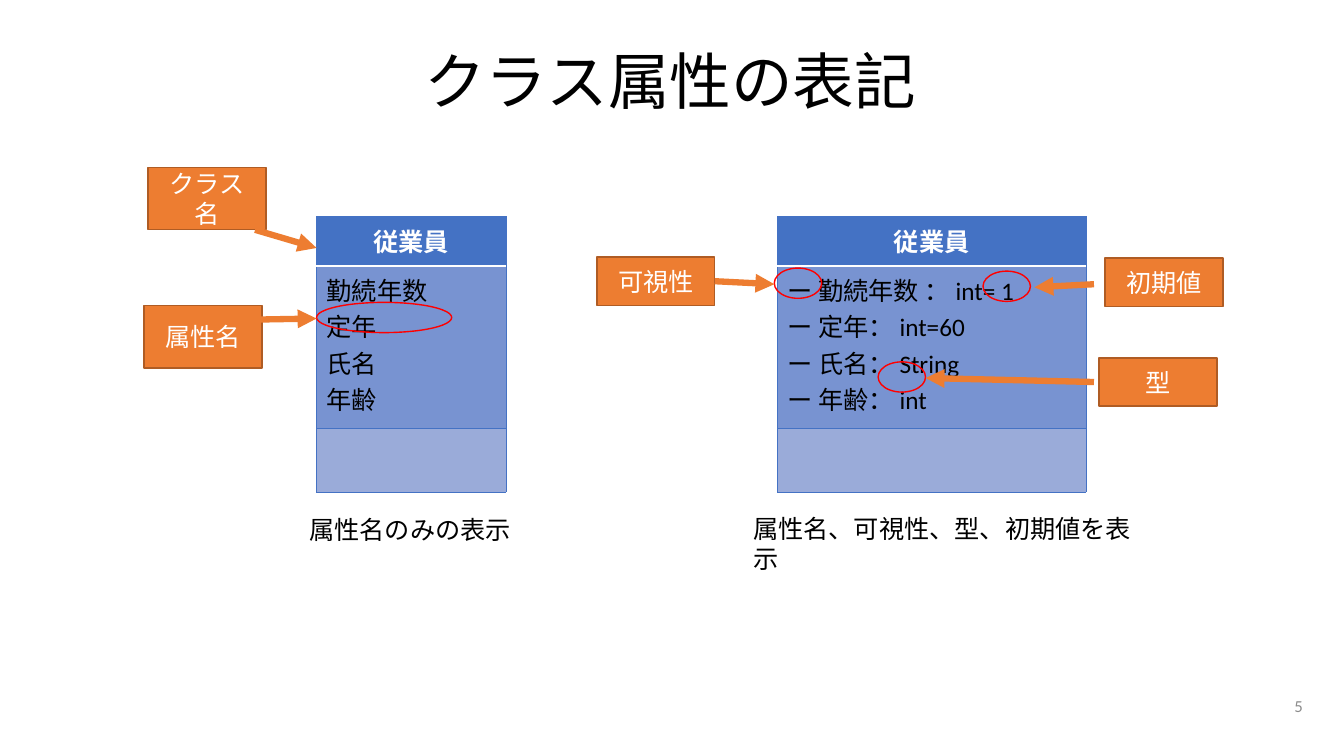
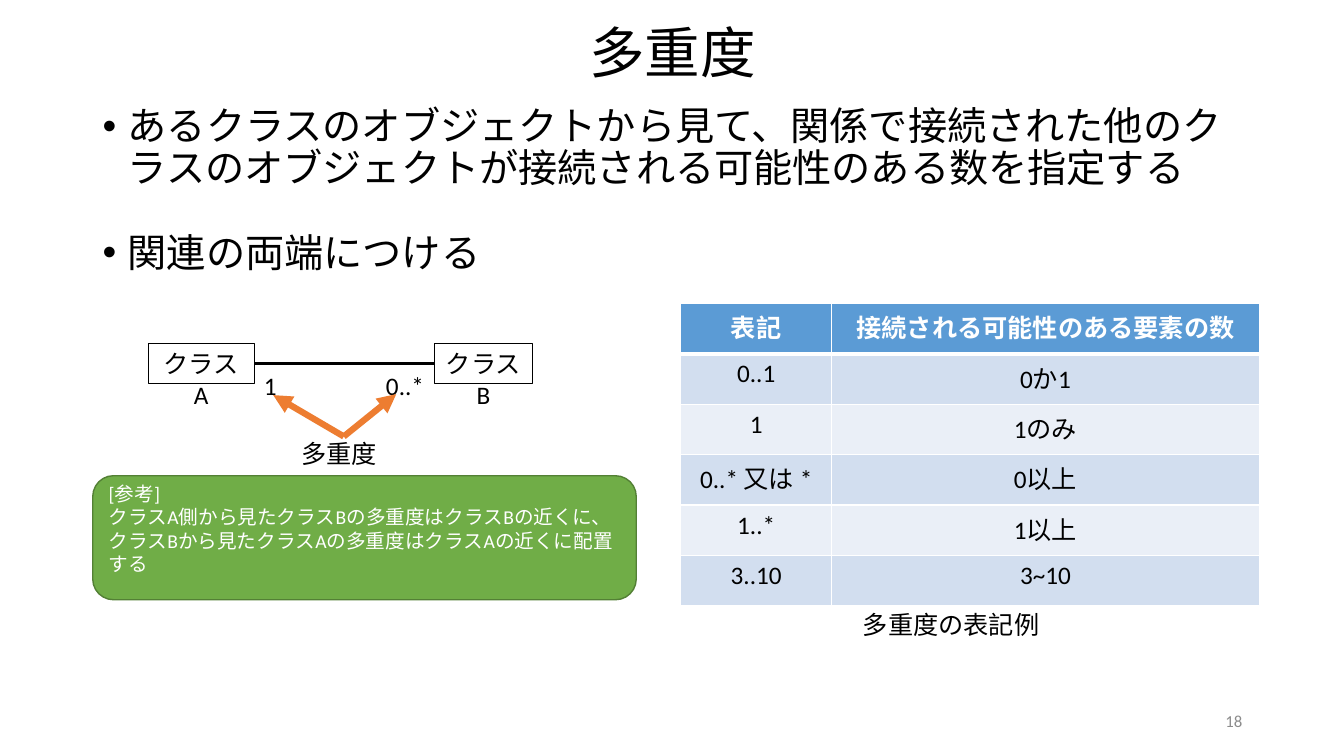
from lxml.etree import SubElement
from pptx import Presentation
from pptx.dml.color import RGBColor
from pptx.enum.shapes import MSO_CONNECTOR, MSO_SHAPE
from pptx.enum.text import MSO_ANCHOR, PP_ALIGN
from pptx.oxml.ns import qn
from pptx.util import Inches, Pt

COLORS = {
    "black": "000000", "white": "FFFFFF", "grey": "8C8C8C", "red": "FF0000",
    "orange": "ED7D31", "orange_edge": "AF5C24",
    "green": "70AD47", "green_edge": "538035",
    "blue": "4472C4", "blue_middle": "7893D1", "blue_pale": "9AABD9",
    "sky": "5B9BD5", "band_dark": "D2DEEF", "band_light": "EAEFF7",
}
LATIN, JAPANESE = "Calibri", "Noto Sans CJK JP"
CENTER, LEFT, RIGHT = PP_ALIGN.CENTER, PP_ALIGN.LEFT, PP_ALIGN.RIGHT
TOP, MIDDLE = MSO_ANCHOR.TOP, MSO_ANCHOR.MIDDLE
TITLE_FORMAT = {"alignment": CENTER, "line_spacing": 0.9}


def color(name):
    return RGBColor.from_string(COLORS[name])


def write(frame, lines, paint="black", size=18, bold=False, anchor=TOP,
          east_asian=LATIN, **paragraph_format):
    frame.word_wrap = True
    frame.vertical_anchor = anchor
    for index, line in enumerate(lines):
        paragraph = frame.paragraphs[0] if index == 0 else frame.add_paragraph()
        for name, value in paragraph_format.items():
            setattr(paragraph, name, value)
        run = paragraph.add_run()
        run.text = line
        for name, value in {"name": LATIN, "size": Pt(size), "bold": bold}.items():
            setattr(run.font, name, value)
        run.font.color.rgb = color(paint)
        SubElement(run._r.get_or_add_rPr(), qn("a:ea")).set("typeface", east_asian)


presentation = Presentation()
presentation.slide_width = Inches(13.33)
presentation.slide_height = Inches(7.5)
blank = presentation.slide_layouts[6]
notation = presentation.slides.add_slide(blank)
multiplicity = presentation.slides.add_slide(blank)

# Titles, page numbers, captions and other plain text
title = {"anchor": MIDDLE, **TITLE_FORMAT}
number = {"paint": "grey", "size": 12, "anchor": MIDDLE, "alignment": RIGHT}
texts = [
    (notation, (0.9, 0.43, 11.5, 0.81), "クラス属性の表記", {"size": 44, **title}),
    (notation, (10.02, 6.8, 3, 0.4), "5", number),
    (notation, (2.97, 5.05, 2.74, 0.4), "属性名のみの表示", {}),
    (notation, (7.37, 5.04, 3.99, 0.4), "属性名、可視性、型、初期値を表示", {}),
    (multiplicity, (0.92, 0.22, 11.5, 0.66), "多重度", {"size": 39.6, **title}),
    (multiplicity, (9.42, 6.95, 3, 0.4), "18", number),
    (multiplicity, (2.52, 3.62, 0.37, 0.4), "1", {}),
    (multiplicity, (3.73, 3.62, 0.68, 0.4), "0..*", {}),
    (multiplicity, (2.89, 4.3, 1.19, 0.4), "多重度", {}),
    (multiplicity, (8.46, 6, 3.44, 0.4), "多重度の表記例", {}),
]
for slide, box, text, text_format in texts:
    shape = slide.shapes.add_textbox(*map(Inches, box))
    write(shape.text_frame, [text], **text_format)

# Bulleted explanation
body = multiplicity.shapes.add_textbox(*map(Inches, (0.92, 1.01, 11.5, 1.9)))
write(body.text_frame, [
    "あるクラスのオブジェクトから見て、関係で接続された他のクラスのオブジェクトが"
    "接続される可能性のある数を指定する",
    "関連の両端につける",
], size=28, line_spacing=0.9)
for paragraph in body.text_frame.paragraphs:
    properties = paragraph._p.get_or_add_pPr()
    properties.set("marL", str(Inches(0.25)))
    properties.set("indent", str(-Inches(0.25)))
    SubElement(properties, qn("a:buFont")).set("typeface", "Arial")
    SubElement(properties, qn("a:buChar")).set("char", "•")
body.text_frame.paragraphs[1].space_before = Pt(30)

# Class boxes and the table of multiplicities; a cell is a list of lines
class_rows = [0.49, 1.61, 0.63]
class_fills = ["blue", "blue_middle", "blue_pale"]
class_style = (class_rows, class_fills, LEFT, "blue", 0.5, 1)
count_fills = ["sky"] + ["band_dark", "band_light"] * 2 + ["band_dark"]
count_style = ([0.5] * 6, count_fills, CENTER, "white", 1, 3)
tables = [
    (notation, (3.14, 2.15), [1.88], class_style, [
        [["従業員"]], [["勤続年数", "定年", "氏名", "年齢"]], [[]]]),
    (notation, (7.71, 2.15), [3.06], class_style, [
        [["従業員"]],
        [["ー 勤続年数 ： int= 1", "ー 定年： int=60", "ー 氏名： String", "ー 年齢： int"]],
        [[]]]),
    (multiplicity, (6.75, 3.01), [1.5, 4.24], count_style, [
        [["表記"], ["接続される可能性のある要素の数"]],
        [["0..1"], ["0か1"]],
        [["1"], ["1のみ"]],
        [["0..* 又は *"], ["0以上"]],
        [["1..*"], ["1以上"]],
        [["3..10"], ["3~10"]]]),
]
for slide, corner, widths, style, rows in tables:
    heights, fills, alignment, edge, edge_width, header_width = style
    size = (sum(widths), sum(heights))
    table = slide.shapes.add_table(
        len(rows), len(widths), *map(Inches, corner + size)).table
    table.first_row = table.horz_banding = False
    for column, width in zip(table.columns, widths):
        column.width = Inches(width)
    for row_index, (cells, height, fill) in enumerate(zip(rows, heights, fills)):
        table.rows[row_index].height = Inches(height)
        header = row_index == 0
        for column_index, lines in enumerate(cells):
            cell = table.cell(row_index, column_index)
            for side in ("lnL", "lnR", "lnT", "lnB"):
                divider = (side == "lnB" and header) or (side == "lnT" and row_index == 1)
                border = SubElement(cell._tc.get_or_add_tcPr(), qn(f"a:{side}"))
                border.set("w", str(Pt(header_width if divider else edge_width)))
                paint = SubElement(border, qn("a:solidFill"))
                SubElement(paint, qn("a:srgbClr")).set(
                    "val", COLORS["white" if divider else edge])
            cell.fill.solid()
            cell.fill.fore_color.rgb = color(fill)
            write(cell.text_frame, lines, "white" if header else "black", bold=header,
                  east_asian=JAPANESE, alignment=CENTER if header else alignment)

# Labels, highlight rings, classes and the note
label = (MSO_SHAPE.RECTANGLE, "orange", "orange_edge", 1,
         {"paint": "white", "anchor": MIDDLE, "alignment": CENTER})
ring = (MSO_SHAPE.OVAL, None, "red", 1, {})
class_box = (MSO_SHAPE.RECTANGLE, None, "black", 0.75, {"alignment": CENTER})
note = (MSO_SHAPE.ROUNDED_RECTANGLE, "green", "green_edge", 1,
        {"paint": "white", "size": 14, "alignment": LEFT})
outlined = [
    (notation, label, (1.47, 1.66, 1.17, 0.62), ["クラス名"]),
    (notation, label, (1.43, 3.03, 1.17, 0.62), ["属性名"]),
    (notation, label, (5.92, 2.55, 1.17, 0.48), ["可視性"]),
    (notation, label, (10.96, 2.56, 1.17, 0.48), ["初期値"]),
    (notation, label, (10.9, 3.55, 1.17, 0.48), ["型"]),
    (notation, ring, (3.14, 3, 1.34, 0.3), []),
    (notation, ring, (7.68, 2.66, 0.47, 0.3), []),
    (notation, ring, (9.75, 2.69, 0.47, 0.3), []),
    (notation, ring, (8.71, 3.59, 0.47, 0.3), []),
    (multiplicity, class_box, (1.47, 3.41, 1.05, 0.4), ["クラスA"]),
    (multiplicity, class_box, (4.31, 3.41, 0.97, 0.4), ["クラスB"]),
    (multiplicity, note, (0.92, 4.72, 5.39, 1.23), [
        "[参考]",
        "クラスA側から見たクラスBの多重度はクラスBの近くに、",
        "クラスBから見たクラスAの多重度はクラスAの近くに配置する"]),
]
named = {}
for slide, style, box, lines in outlined:
    preset, fill, edge, width, text_format = style
    shape = slide.shapes.add_shape(preset, *map(Inches, box))
    shape.shadow.inherit = False
    if fill:
        shape.fill.solid()
        shape.fill.fore_color.rgb = color(fill)
    else:
        shape.fill.background()
    shape.line.color.rgb = color(edge)
    shape.line.width = Pt(width)
    write(shape.text_frame, lines, **text_format)
    if style is note:
        shape.text_frame.margin_top = 0
    if lines:
        named[lines[0]] = shape

# Arrows and the association: ends, paint, width, joined shapes
arrow = ("orange", 4.5, True)
association = ("black", 2.25, False)
lines = [
    (notation, (2.53, 2.28, 3.14, 2.46), arrow, None, None),
    (notation, (2.58, 3.17, 3.14, 3.16), arrow, None, None),
    (notation, (7.09, 2.78, 7.68, 2.82), arrow, "可視性", None),
    (notation, (10.85, 2.82, 10.26, 2.85), arrow, None, None),
    (notation, (10.85, 3.79, 9.18, 3.75), arrow, None, None),
    (multiplicity, (2.52, 3.6, 4.31, 3.6), association, "クラスA", "クラスB"),
    (multiplicity, (3.41, 4.33, 2.71, 3.92), arrow, None, None),
    (multiplicity, (3.41, 4.33, 3.93, 3.91), arrow, None, None),
]
for slide, ends, (paint, width, pointed), start, finish in lines:
    connector = slide.shapes.add_connector(MSO_CONNECTOR.STRAIGHT, *map(Inches, ends))
    if start:
        connector.begin_connect(named[start], 3)
    if finish:
        connector.end_connect(named[finish], 1)
    connector.line.color.rgb = color(paint)
    connector.line.width = Pt(width)
    if pointed:
        SubElement(connector.line._get_or_add_ln(), qn("a:tailEnd")).set("type", "triangle")
    SubElement(connector._element.spPr, qn("a:effectLst"))

presentation.save("out.pptx")
